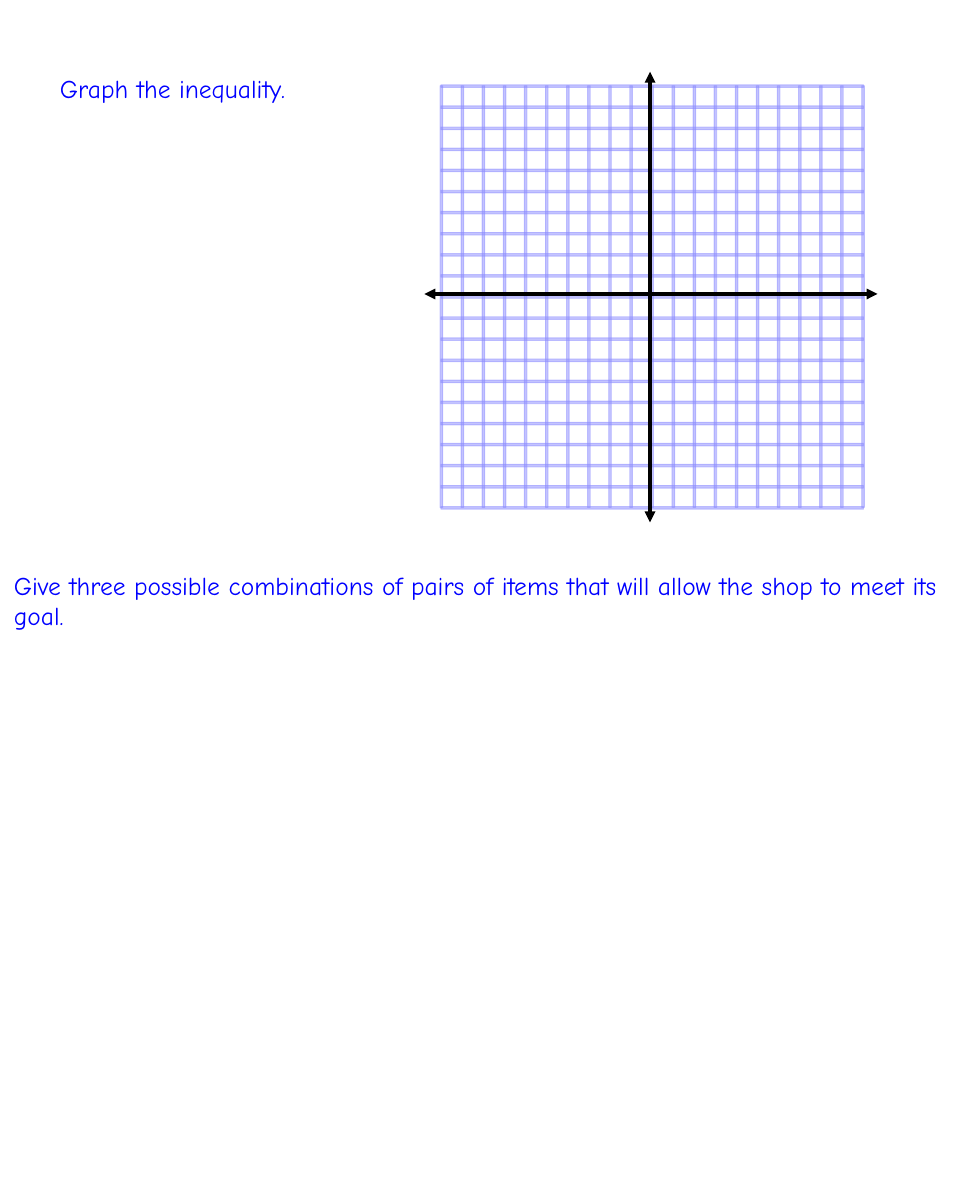
"""Builds a worksheet slide with a blank coordinate grid for graphing an inequality."""
from lxml import etree
from pptx import Presentation
from pptx.dml.color import RGBColor
from pptx.enum.shapes import MSO_CONNECTOR, MSO_SHAPE
from pptx.enum.text import MSO_AUTO_SIZE
from pptx.oxml.ns import qn
from pptx.util import Inches, Pt

RECTANGLE = MSO_SHAPE.RECTANGLE
STRAIGHT = MSO_CONNECTOR.STRAIGHT
GROW = MSO_AUTO_SIZE.SHAPE_TO_FIT_TEXT

FONT, FONT_SIZE = "Comic Neue", 21
INK, GRID_COLOR, AXIS_COLOR = "0000FF", "8C8CFF", "000000"
GRID_ALPHA = 51

PROMPTS = [
    (" Graph the inequality.", 0.49, 0.79, 4.39, 0.45),
    ("Give three possible combinations of pairs of items that will allow "
     "the shop to meet its goal.", 0.06, 6.46, 11.25, 0.81),
]
GRID_LEFT, GRID_TOP, GRID_SPAN = 5.03, 0.97, 4.82
CELLS, BAR = 20, 0.03
AXES = [(7.43, 5.97, 7.43, 0.82), (4.85, 3.36, 10.03, 3.36)]


def paint(color_format, color):
    color_format.rgb = RGBColor.from_string(color)


def add_prompt(shapes, text, *box):
    frame = shapes.add_textbox(*map(Inches, box)).text_frame
    frame.word_wrap = True
    frame.auto_size = GROW
    paragraph = frame.paragraphs[0]
    paragraph.text = text
    paragraph.font.name = FONT
    paragraph.font.size = Pt(FONT_SIZE)
    paint(paragraph.font.color, INK)


def add_grid_bar(shapes, *box):
    bar = shapes.add_shape(RECTANGLE, *map(Inches, box))
    bar.shadow.inherit = False
    bar.fill.solid()
    paint(bar.fill.fore_color, GRID_COLOR)
    bar.line.width = 0
    paint(bar.line.color, GRID_COLOR)
    for color in bar.element.spPr.iter(qn("a:srgbClr")):
        etree.SubElement(color, qn("a:alpha"), val=str(GRID_ALPHA * 1000))


def add_axis(shapes, *ends):
    axis = shapes.add_connector(STRAIGHT, *map(Inches, ends))
    axis.line.width = Pt(3)
    paint(axis.line.color, AXIS_COLOR)
    outline = axis.element.spPr.find(qn("a:ln"))
    for end in ("a:headEnd", "a:tailEnd"):
        etree.SubElement(outline, qn(end), type="triangle")
    etree.SubElement(axis.element.spPr, qn("a:effectLst"))


def main():
    deck = Presentation()
    deck.slide_width, deck.slide_height = Inches(11.11), Inches(13.76)
    shapes = deck.slides.add_slide(deck.slide_layouts[6]).shapes

    for prompt in PROMPTS:
        add_prompt(shapes, *prompt)

    for index in range(CELLS + 1):
        offset = index * GRID_SPAN / CELLS
        add_grid_bar(shapes, GRID_LEFT + offset, GRID_TOP + 0.01, BAR, GRID_SPAN)
        add_grid_bar(shapes, GRID_LEFT + 0.01, GRID_TOP + offset, GRID_SPAN + 0.01, BAR)

    for axis in AXES:
        add_axis(shapes, *axis)

    deck.save("out.pptx")


if __name__ == "__main__":
    main()
